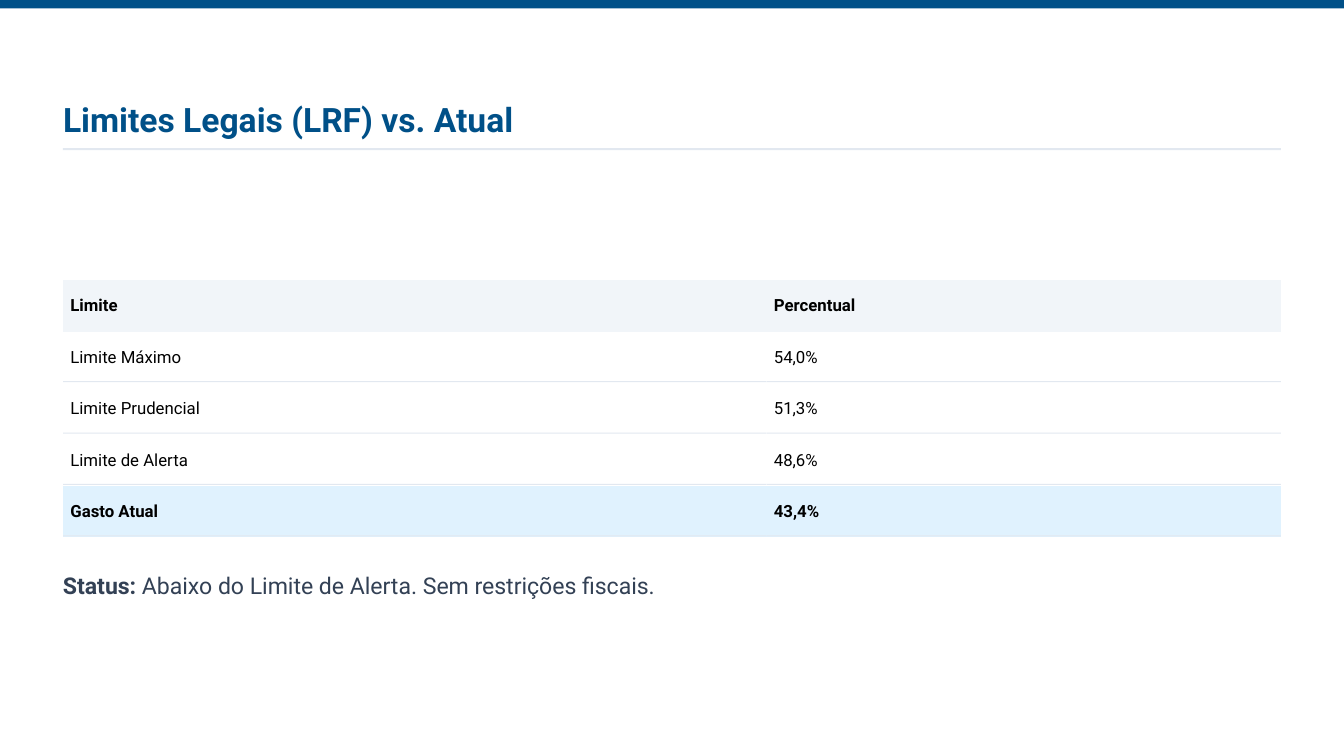
import pptx
import pptx.dml.color
import pptx.enum.shapes
import pptx.enum.text
import pptx.oxml.ns
import pptx.util

RGBColor = pptx.dml.color.RGBColor
BLUE = RGBColor(0x00, 0x50, 0x88)
SLATE = RGBColor(0x33, 0x41, 0x55)
BLACK = RGBColor(0x00, 0x00, 0x00)
RULE_GREY = RGBColor(0xE2, 0xE8, 0xF0)
HEADER_GREY = RGBColor(0xF1, 0xF5, 0xF9)
CURRENT_BLUE = RGBColor(0xE0, 0xF2, 0xFE)

PX = 9525  # EMU per px, 96 px to the inch
LEFT, WIDTH = 60, 1160
TABLE_TOP, ROW_HEIGHT = 267, 49
COLUMN_WIDTHS = [670, 490]
NO_STYLE = "{2D5ABB26-0587-4C30-8999-92F81FD0307C}"

ROWS = [
    ("Limite", "Percentual"),
    ("Limite Máximo", "54,0%"),
    ("Limite Prudencial", "51,3%"),
    ("Limite de Alerta", "48,6%"),
    ("Gasto Atual", "43,4%"),
]
ROW_FILLS = {0: HEADER_GREY, len(ROWS) - 1: CURRENT_BLUE}

deck = pptx.Presentation()
deck.slide_width, deck.slide_height = 1280 * PX, 720 * PX
page = deck.slides.add_slide(deck.slide_layouts[5])


def add_bar(left, top, width, height, color):
    bar = page.shapes.add_shape(
        pptx.enum.shapes.MSO_SHAPE.RECTANGLE,
        left * PX, top * PX, width * PX, height * PX)
    bar.shadow.inherit = False
    bar.fill.solid()
    bar.fill.fore_color.rgb = color
    bar.line.fill.background()


def write(para, text, size, color, bold):
    span = para.add_run()
    span.text = text
    values = {"name": "Roboto", "size": pptx.util.Pt(size), "bold": bold}
    for key, value in values.items():
        setattr(span.font, key, value)
    span.font.color.rgb = color


# Top band, title and its rule
add_bar(0, 0, 1280, 8, BLUE)
title = page.shapes.title
status = page.shapes.add_textbox(0, 0, PX, PX)
for box, place in ((title, (LEFT, 94, 1218, 39)), (status, (LEFT, 531, WIDTH, 33))):
    box.left, box.top, box.width, box.height = [length * PX for length in place]
    frame_values = {
        "margin_left": 0, "margin_top": 0, "margin_right": 0, "margin_bottom": 0,
        "word_wrap": True,
        "auto_size": pptx.enum.text.MSO_AUTO_SIZE.NONE,
        "vertical_anchor": pptx.enum.text.MSO_ANCHOR.TOP,
    }
    for key, value in frame_values.items():
        setattr(box.text_frame, key, value)
    box.text_frame.paragraphs[0].alignment = pptx.enum.text.PP_ALIGN.LEFT
write(title.text_frame.paragraphs[0], "Limites Legais (LRF) vs. Atual", 24, BLUE, True)
add_bar(LEFT, 141, WIDTH, 2, RULE_GREY)

# Status line
para = status.text_frame.paragraphs[0]
para.line_spacing = 1.5
write(para, "Status:", 16.5, SLATE, True)
write(para, " Abaixo do Limite de Alerta. Sem restrições fiscais.", 16.5, SLATE, False)

# Table of limits
table = page.shapes.add_table(
    len(ROWS), len(COLUMN_WIDTHS), LEFT * PX, TABLE_TOP * PX,
    WIDTH * PX, len(ROWS) * ROW_HEIGHT * PX).table
table.first_row = table.horz_banding = False
table._tbl.tblPr.find(pptx.oxml.ns.qn("a:tableStyleId")).text = NO_STYLE
for column, width in zip(table.columns, COLUMN_WIDTHS):
    column.width = width * PX
for row_index, texts in enumerate(ROWS):
    table.rows[row_index].height = ROW_HEIGHT * PX
    for column_index, text in enumerate(texts):
        cell = table.cell(row_index, column_index)
        cell_values = {
            "margin_left": 7 * PX, "margin_right": 7 * PX,
            "margin_top": 3 * PX, "margin_bottom": 3 * PX,
            "vertical_anchor": pptx.enum.text.MSO_ANCHOR.MIDDLE,
        }
        for key, value in cell_values.items():
            setattr(cell, key, value)
        if row_index in ROW_FILLS:
            cell.fill.solid()
            cell.fill.fore_color.rgb = ROW_FILLS[row_index]
        else:
            cell.fill.background()
        write(cell.text_frame.paragraphs[0], text, 12, BLACK, row_index in ROW_FILLS)

# Rules under the body rows, one per column
for row_index in range(1, len(ROWS)):
    for column_index, width in enumerate(COLUMN_WIDTHS):
        add_bar(LEFT + sum(COLUMN_WIDTHS[:column_index]),
                TABLE_TOP + (row_index + 1) * ROW_HEIGHT - 2, width, 1, RULE_GREY)

deck.save("out.pptx")
